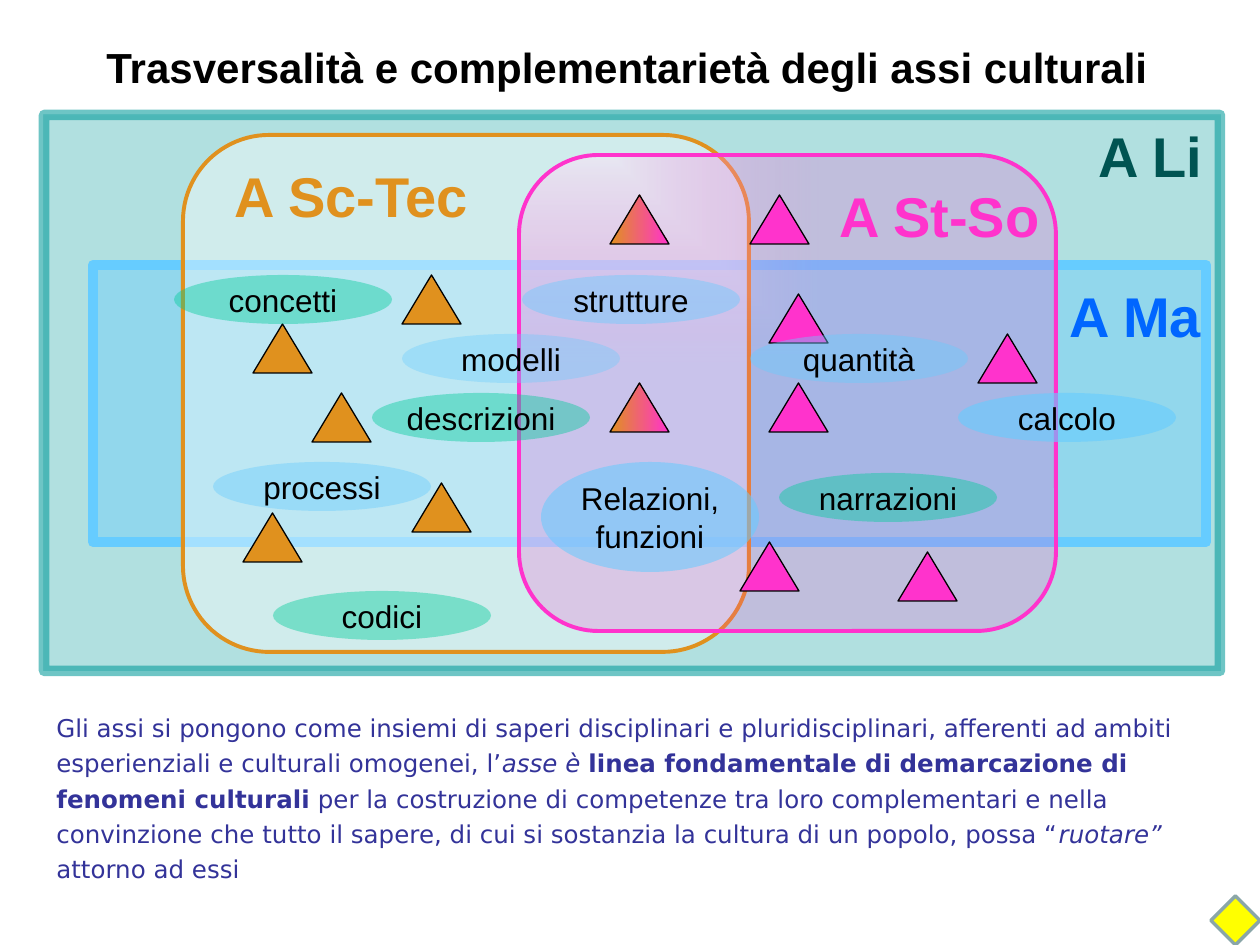
"""Build a slide showing how the cultural axes overlap and complement each other."""
from dataclasses import dataclass
from typing import Any

from lxml import etree
from pptx import Presentation
from pptx.dml.color import RGBColor
from pptx.enum.shapes import MSO_SHAPE
from pptx.enum.text import MSO_ANCHOR, MSO_AUTO_SIZE, PP_ALIGN
from pptx.oxml.ns import qn
from pptx.shapes.autoshape import Shape
from pptx.slide import Slide
from pptx.text.text import TextFrame
from pptx.util import Pt

RECTANGLE = MSO_SHAPE.RECTANGLE
ROUNDED = MSO_SHAPE.ROUNDED_RECTANGLE
TRIANGLE = MSO_SHAPE.ISOSCELES_TRIANGLE
OVAL = MSO_SHAPE.OVAL
DIAMOND = MSO_SHAPE.DIAMOND
MIDDLE = MSO_ANCHOR.MIDDLE
FIT_SHAPE = MSO_AUTO_SIZE.SHAPE_TO_FIT_TEXT
LEFT, CENTER = PP_ALIGN.LEFT, PP_ALIGN.CENTER

EMU_PER_PX = 914400 / 126
SLIDE_SIZE = (1260, 945)
TRIANGLE_SIZE = (59, 49)
OVAL_WIDTH = 218
COLORS = {
    "black": "000000",
    "white": "FFFFFF",
    "teal": "009999",
    "dark teal": "005452",
    "sky": "66CCFF",
    "blue": "0066FF",
    "orange": "E0911E",
    "pink": "FF33CC",
    "green": "00CC99",
    "indigo": "333399",
    "yellow": "FFFF00",
    "grey": "8AA6A8",
}
BOLD = {"bold": True}
ITALIC = {"italic": True}


@dataclass(frozen=True)
class Stop:
    color: str
    opacity: int = 100


@dataclass(frozen=True)
class Axis:
    kind: MSO_SHAPE
    box: tuple[int, int, int, int]
    fill: tuple[Stop, ...]
    line: Stop
    line_width: float


@dataclass(frozen=True)
class Label:
    text: str
    box: tuple[int, int, int, int]
    color: str


@dataclass(frozen=True)
class Concept:
    text: str
    left: int
    top: int
    color: str
    opacity: int
    height: int = 49


AXES = (
    Axis(RECTANGLE, (44, 115, 1176, 556), (Stop("white", 24), Stop("teal", 30)), Stop("teal", 56), 6),
    Axis(RECTANGLE, (93, 265, 1113, 277), (Stop("white", 38), Stop("sky", 40)), Stop("sky"), 6),
    Axis(ROUNDED, (183, 135, 566, 517), (Stop("white", 40),), Stop("orange"), 2.25),
    Axis(ROUNDED, (519, 155, 537, 476), (Stop("white", 54), Stop("pink", 19)), Stop("pink"), 2.25),
)
LABELS = (
    Label("A Li", (1086, 115, 131, 79), "dark teal"),
    Label("A Ma", (1057, 275, 159, 79), "blue"),
    Label("A St-So", (827, 175, 228, 79), "pink"),
    Label("A Sc-Tec", (222, 155, 265, 79), "orange"),
)
TRIANGLES = {
    ("orange",): ((253, 324), (312, 393), (243, 513), (412, 483), (402, 275)),
    ("orange", "pink"): ((610, 383), (610, 195)),
    ("pink",): ((740, 542), (978, 334), (769, 294), (898, 552), (769, 383), (750, 195)),
}
CONCEPTS = (
    Concept("calcolo", 958, 393, "sky", 61),
    Concept("quantità", 750, 334, "sky", 41),
    Concept("Relazioni,\nfunzioni", 541, 462, "sky", 55, 110),
    Concept("modelli", 402, 334, "sky", 35),
    Concept("strutture", 522, 275, "sky", 42),
    Concept("codici", 273, 591, "green", 42),
    Concept("narrazioni", 779, 473, "green", 42),
    Concept("concetti", 174, 275, "green", 42),
    Concept("processi", 213, 462, "sky", 41),
    Concept("descrizioni", 372, 393, "green", 42),
)
TITLE = "Trasversalità e complementarietà degli assi culturali"
BODY = (
    ("Gli assi si pongono come insiemi di saperi disciplinari e pluridisciplinari, afferenti "
     "ad ambiti esperienziali e culturali omogenei, l’", {}),
    ("asse è ", ITALIC),
    ("linea fondamentale di demarcazione di fenomeni culturali", BOLD),
    (" per la costruzione di competenze tra loro complementari e nella convinzione che tutto "
     "il sapere, di cui si sostanzia la cultura di un popolo, possa “", {}),
    ("ruotare” ", ITALIC),
    ("attorno ad essi", {}),
)


def emu(*lengths: int) -> list[int]:
    """Turn px lengths into EMU."""
    return [round(length * EMU_PER_PX) for length in lengths]


def set_values(target: Any, values: dict[str, Any]) -> None:
    """Set each named attribute on the target."""
    for name, value in values.items():
        setattr(target, name, value)


def add_color(parent: Any, stop: Stop) -> None:
    """Append a colour with its opacity to a fill element."""
    color = etree.SubElement(parent, qn("a:srgbClr"), val=COLORS[stop.color])
    if stop.opacity < 100:
        etree.SubElement(color, qn("a:alpha"), val=str(stop.opacity * 1000))


def make_fill(stops: tuple[Stop, ...], linear: bool = False) -> Any:
    """Return a solid fill for one stop, or an evenly spread gradient for more."""
    if len(stops) == 1:
        fill = etree.Element(qn("a:solidFill"))
        add_color(fill, stops[0])
        return fill
    fill = etree.Element(qn("a:gradFill"), rotWithShape="1")
    stop_list = etree.SubElement(fill, qn("a:gsLst"))
    for index, stop in enumerate(stops):
        position = str(100000 * index // (len(stops) - 1))
        add_color(etree.SubElement(stop_list, qn("a:gs"), pos=position), stop)
    if linear:
        etree.SubElement(fill, qn("a:lin"), ang="0", scaled="1")
    else:
        spread = etree.SubElement(fill, qn("a:path"), path="rect")
        etree.SubElement(spread, qn("a:fillToRect"), r="100000", b="100000")
    return fill


def add_figure(slide: Slide, kind: MSO_SHAPE, box: tuple[int, int, int, int],
               fill: tuple[Stop, ...], line: Stop | None = None,
               line_width: float = 0.75, linear: bool = False) -> Shape:
    """Draw a preset shape with its fill and outline."""
    shape = slide.shapes.add_shape(kind, *emu(*box))
    shape.shadow.inherit = False
    properties = shape.element.spPr
    properties.find(qn("a:prstGeom")).addnext(make_fill(fill, linear))
    if line is None:
        shape.line.fill.background()
    else:
        shape.line.width = Pt(line_width)
        properties.find(qn("a:ln")).insert(0, make_fill((line,)))
    return shape


def write_runs(frame: TextFrame, lines: tuple, color: str, font: dict[str, Any],
               layout: dict[str, Any]) -> None:
    """Write one paragraph for each line of formatted runs."""
    for index, runs in enumerate(lines):
        paragraph = frame.add_paragraph() if index else frame.paragraphs[0]
        set_values(paragraph, layout)
        for text, emphasis in runs:
            run = paragraph.add_run()
            run.text = text
            set_values(run.font, {**font, **emphasis})
            run.font.color.rgb = RGBColor.from_string(COLORS[color])


def add_text(slide: Slide, box: tuple[int, int, int, int], runs: tuple, color: str,
             font: dict[str, Any], layout: dict[str, Any], wrap: bool = True) -> None:
    """Add a text box that grows with its text."""
    frame = slide.shapes.add_textbox(*emu(*box)).text_frame
    set_values(frame, {"word_wrap": wrap, "auto_size": FIT_SHAPE})
    write_runs(frame, (runs,), color, font, layout)


def add_concept(slide: Slide, concept: Concept) -> None:
    """Draw an oval with its concept centred inside."""
    box = (concept.left, concept.top, OVAL_WIDTH, concept.height)
    frame = add_figure(slide, OVAL, box, (Stop(concept.color, concept.opacity),)).text_frame
    set_values(frame, {"word_wrap": False, "vertical_anchor": MIDDLE})
    lines = tuple(((text, {}),) for text in concept.text.split("\n"))
    write_runs(frame, lines, "black", {"name": "Arial", "size": Pt(18)}, {"alignment": CENTER})


def main() -> None:
    """Build and save the slide."""
    presentation = Presentation()
    presentation.slide_width, presentation.slide_height = emu(*SLIDE_SIZE)
    slide = presentation.slides.add_slide(presentation.slide_layouts[6])
    heading = {"name": "Arial", "bold": True}
    add_text(slide, (74, 35, 1106, 63), ((TITLE, {}),), "black",
             {**heading, "size": Pt(24)}, {"alignment": CENTER})
    for axis in AXES:
        add_figure(slide, axis.kind, axis.box, axis.fill, axis.line, axis.line_width)
    for label in LABELS:
        add_text(slide, label.box, ((label.text, {}),), label.color,
                 {**heading, "size": Pt(32)}, {"alignment": LEFT}, wrap=False)
    add_text(slide, (44, 701, 1160, 189), BODY, "indigo",
             {"name": "DejaVu Sans", "size": Pt(14)}, {"alignment": LEFT, "line_spacing": 1.2})
    for colors, places in TRIANGLES.items():
        for place in places:
            add_figure(slide, TRIANGLE, place + TRIANGLE_SIZE,
                       tuple(Stop(color) for color in colors), Stop("black"), linear=True)
    for concept in CONCEPTS:
        add_concept(slide, concept)
    add_figure(slide, DIAMOND, (1211, 896, 49, 49), (Stop("yellow"),), Stop("grey"), 2)
    presentation.save("out.pptx")


if __name__ == "__main__":
    main()
